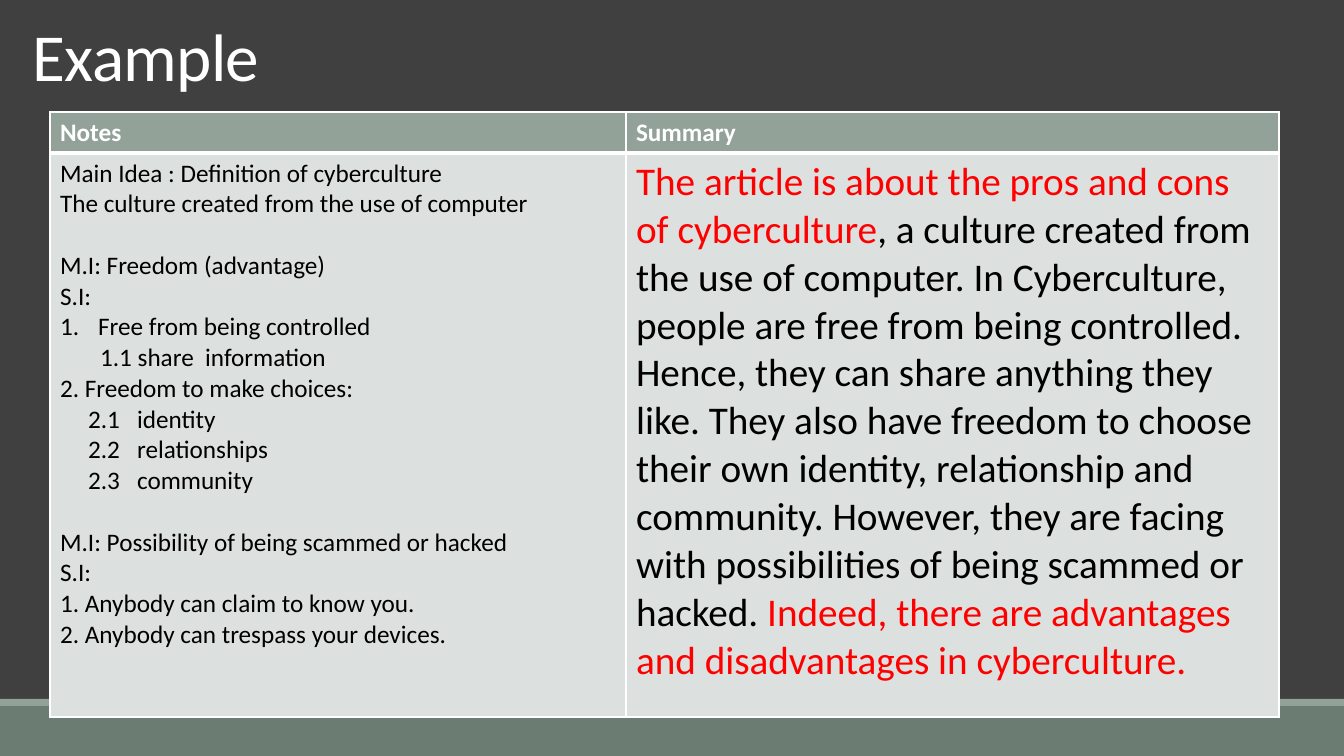
"""Build the slide with example notes and a summary on cyberculture."""
import pptx
import pptx.dml.color
import pptx.enum.shapes
import pptx.enum.text
import pptx.oxml
import pptx.oxml.ns
import pptx.util

THEME = {
    "font": "Calibri",
    "background": "404040", "footer": "6B7D72", "accent": "93A299",
    "body": "DCE0DE", "white": "FFFFFF", "black": "000000", "red": "FF0000",
    "title size": 48, "notes size": 18, "summary size": 28, "blank line": 22,
}
PX = 914400 / 100.8


def px(length):
    return pptx.util.Emu(round(length * PX))


def add_run(paragraph, text, size, color, bold=False):
    run = paragraph.add_run()
    run.text = text
    run.font.name = THEME["font"]
    run.font.size = pptx.util.Pt(size)
    run.font.bold = bold
    run.font.color.rgb = pptx.dml.color.RGBColor.from_string(THEME[color])
    return run


presentation = pptx.Presentation()
presentation.slide_width, presentation.slide_height = px(1344), px(756)
slide = presentation.slides.add_slide(presentation.slide_layouts[6])
slide.background.fill.solid()
slide.background.fill.fore_color.rgb = pptx.dml.color.RGBColor.from_string(THEME["background"])

for top, height, color in [(706, 50, "footer"), (699, 7, "accent")]:
    band = slide.shapes.add_shape(
        pptx.enum.shapes.MSO_SHAPE.RECTANGLE, 0, px(top), px(1344), px(height))
    band.shadow.inherit = False
    band.fill.solid()
    band.fill.fore_color.rgb = pptx.dml.color.RGBColor.from_string(THEME[color])
    band.line.fill.background()

title_frame = slide.shapes.add_textbox(px(23), px(16), px(1109), px(84)).text_frame
title_frame.word_wrap = True
title_frame.vertical_anchor = pptx.enum.text.MSO_ANCHOR.BOTTOM
title_frame.paragraphs[0].line_spacing = 0.85
title_run = add_run(title_frame.paragraphs[0], "Example", THEME["title size"], "white")
title_run.font._element.set("spc", "-50")

column_widths, row_heights = [576, 653], [41, 564]
table = slide.shapes.add_table(
    2, 2, px(50), px(112), px(sum(column_widths)), px(sum(row_heights))).table
for column, width in zip(table.columns, column_widths):
    column.width = px(width)
for row, height in zip(table.rows, row_heights):
    row.height = px(height)

for row_index, (fill, bottom, top) in enumerate([("accent", 3, 1), ("body", 1, 3)]):
    for cell in table.rows[row_index].cells:
        properties = cell._tc.get_or_add_tcPr()
        for side, points in [("L", 1), ("R", 1), ("T", top), ("B", bottom)]:
            properties.append(pptx.oxml.parse_xml(
                f'<a:ln{side} {pptx.oxml.ns.nsdecls("a")} w="{pptx.util.Pt(points)}">'
                f'<a:solidFill><a:srgbClr val="{THEME["white"]}"/></a:solidFill></a:ln{side}>'))
        cell.fill.solid()
        cell.fill.fore_color.rgb = pptx.dml.color.RGBColor.from_string(THEME[fill])

for cell, heading in zip(table.rows[0].cells, ["Notes", "Summary"]):
    add_run(cell.text_frame.paragraphs[0], heading, THEME["notes size"], "white", True)

INDENTS = {"plain": (0, 0), "numbered": (38, -38), "detail": (40, 0), "listed": (77, -49)}
notes = [
    ("Main Idea : Definition of cyberculture", "plain", False),
    ("The culture created from the use of computer", "plain", False),
    ("M.I: Freedom (advantage)", "plain", True),
    ("S.I:", "plain", False),
    ("Free from being controlled", "numbered", False),
    ("1.1 share  information", "detail", False),
    ("2. Freedom to make choices:", "plain", False),
    ("2.1\tidentity", "listed", False),
    ("2.2\trelationships", "listed", False),
    ("2.3\tcommunity", "listed", False),
    ("M.I: Possibility of being scammed or hacked", "plain", True),
    ("S.I:", "plain", False),
    ("1. Anybody can claim to know you.", "plain", False),
    ("2. Anybody can trespass your devices.", "plain", False),
]
notes_frame = table.cell(1, 0).text_frame
for index, (text, level, starts_idea) in enumerate(notes):
    paragraph = notes_frame.add_paragraph() if index else notes_frame.paragraphs[0]
    if starts_idea:
        paragraph.space_before = pptx.util.Pt(THEME["blank line"])
    margin, indent = INDENTS[level]
    properties = paragraph._p.get_or_add_pPr()
    properties.set("marL", str(px(margin)))
    properties.set("indent", str(px(indent)))
    if level == "numbered":
        properties.append(pptx.oxml.parse_xml(
            f'<a:buAutoNum {pptx.oxml.ns.nsdecls("a")} type="arabicPeriod"/>'))
    add_run(paragraph, text, THEME["notes size"], "black")

summary = [
    ("The article is about the pros and cons of cyberculture", "red"),
    (", a culture created from the use of computer. In Cyberculture, people are free "
     "from being controlled. Hence, they can share anything they like. They also have "
     "freedom to choose their own identity, relationship and community. However, they "
     "are facing with possibilities of being scammed or hacked. ", "black"),
    ("Indeed, there are advantages and disadvantages in cyberculture.", "red"),
]
for text, color in summary:
    add_run(table.cell(1, 1).text_frame.paragraphs[0], text, THEME["summary size"], color)

presentation.save("out.pptx")
